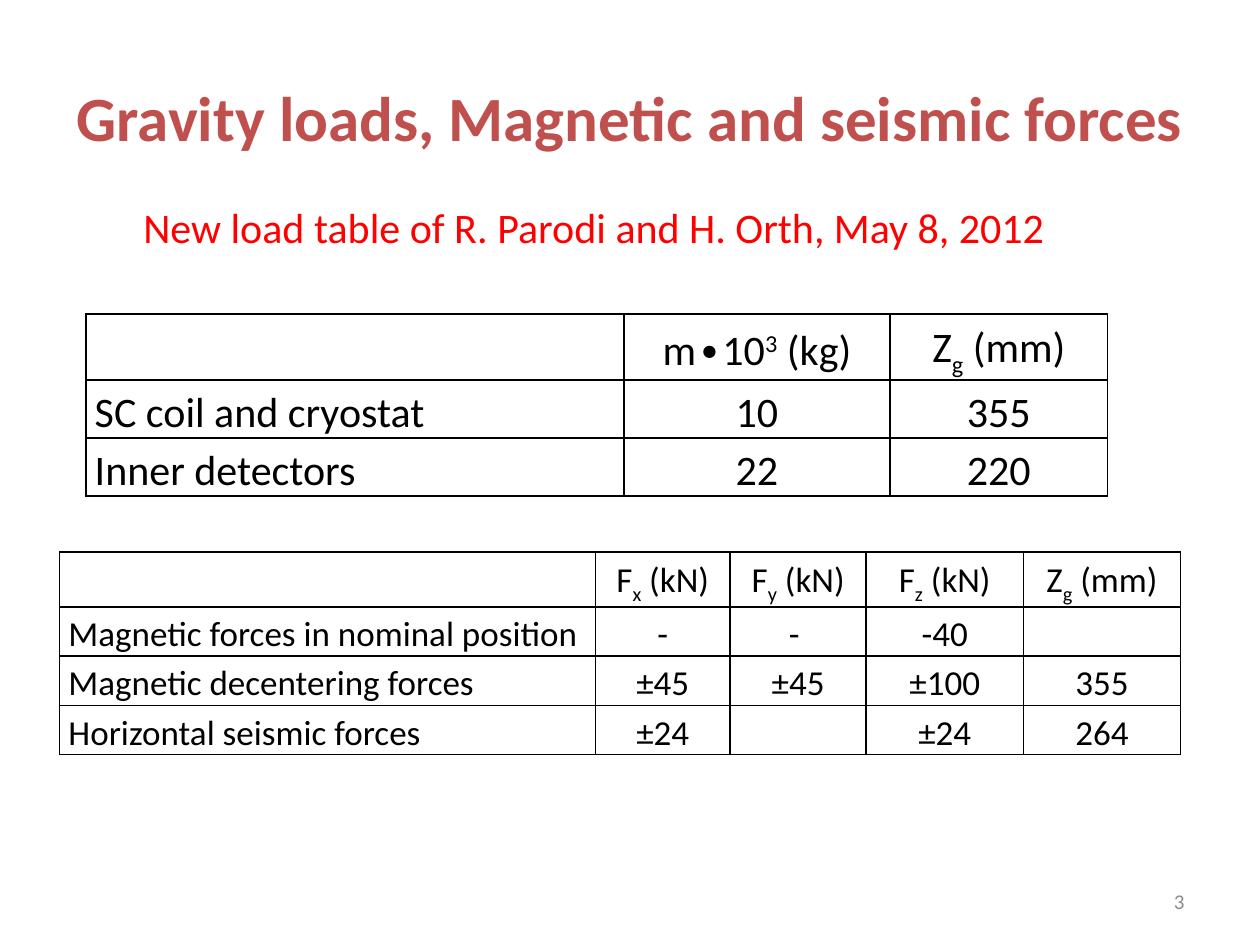
from lxml.etree import SubElement as Sub
from pptx import Presentation
from pptx.dml.color import RGBColor as RGB
from pptx.enum.text import MSO_ANCHOR as Anchor, MSO_AUTO_SIZE as Auto, PP_ALIGN as Align
from pptx.oxml.ns import qn
from pptx.util import Cm, Pt

THEME = {
    "font": "Calibri",
    "title": {"size": 36, "color": "C0504D", "bold": True},
    "note": {"size": 24, "color": "FF0000"},
    "page": {"size": 12, "color": "8C8C8C"},
    "loads": {"size": 24, "color": "000000"},
    "forces": {"size": 20, "color": "000000"},
    "line": "000000",
    "fill": "FFFFFF",
}
SUB, SUP = -25, 30

TITLE = "Gravity loads, Magnetic and seismic forces"
NOTE = "New load table of R. Parodi and H. Orth, May 8, 2012"
PAGE = "3"

# A tuple cell holds: base text, raised or lowered text, rest, shift in percent
ZG = ("Z", "g", " (mm)", SUB)
TABLES = [
    {
        "style": "forces", "at": (1.2, 11.13),
        "cols": [10.8, 2.72, 2.74, 3.17, 3.17], "rows": [1.09, 0.99, 0.99, 0.99],
        "cells": [
            ["", *[("F", axis, " (kN)", SUB) for axis in "xyz"], ZG],
            ["Magnetic forces in nominal position", "-", "- ", "-40", ""],
            ["Magnetic decentering forces", "±45", "±45", "±100", "355"],
            ["Horizontal seismic forces", "±24", "", "±24", "264"],
        ],
    },
    {
        "style": "loads", "at": (1.73, 6.33),
        "cols": [10.85, 5.36, 4.39], "rows": [1.31, 1.17, 1.17],
        "cells": [
            ["", ("m∙10", "3", " (kg)", SUP), ZG],
            ["SC coil and cryostat", "10", "355"],
            ["Inner detectors", "22", "220"],
        ],
    },
]


def put(obj, **vals):
    for name, val in vals.items():
        setattr(obj, name, val)


def write(para, text, style, shift=0):
    run = para.add_run()
    run.text = text
    put(run.font, name=THEME["font"], size=Pt(style["size"]), bold=style.get("bold", False))
    run.font.color.rgb = RGB.from_string(style["color"])
    if shift:
        run.font._element.set("baseline", str(shift * 1000))


def fill_box(shape, text, style, align):
    frame = shape.text_frame
    put(frame, word_wrap=True, vertical_anchor=Anchor.MIDDLE)
    para = frame.paragraphs[0]
    para.alignment = align
    write(para, text, THEME[style])
    return frame


def rule(cell):
    """Draw a thin line on all four sides of a cell."""
    props = cell._tc.get_or_add_tcPr()
    for side in ("lnL", "lnR", "lnT", "lnB"):
        line = Sub(props, qn("a:" + side), w=str(Pt(1)))
        Sub(Sub(line, qn("a:solidFill")), qn("a:srgbClr"), val=THEME["line"])


def fill_cell(cell, item, style, align):
    rule(cell)
    cell.fill.solid()
    cell.fill.fore_color.rgb = RGB.from_string(THEME["fill"])
    put(cell, vertical_anchor=Anchor.MIDDLE, margin_left=Cm(0.18),
        margin_right=Cm(0.18), margin_top=0, margin_bottom=0)
    if not item:
        return
    para = cell.text_frame.paragraphs[0]
    put(para, alignment=align, line_spacing=1.15, space_before=Pt(6), space_after=Pt(6))
    if isinstance(item, tuple):
        base, mark, rest, shift = item
        parts = [(base, 0), (mark, shift), (rest, 0)]
    else:
        parts = [(item, 0)]
    for text, shift in parts:
        write(para, text, style, shift)


def add_grid(slide, data):
    cols, rows = data["cols"], data["rows"]
    size = map(Cm, (*data["at"], sum(cols), sum(rows)))
    grid = slide.shapes.add_table(len(rows), len(cols), *size).table
    put(grid, first_row=False, horz_banding=False)
    for col, width in zip(grid.columns, cols):
        col.width = Cm(width)
    for row, height, items in zip(grid.rows, rows, data["cells"]):
        row.height = Cm(height)
        for i, (cell, item) in enumerate(zip(row.cells, items)):
            align = Align.CENTER if i else Align.LEFT
            fill_cell(cell, item, THEME[data["style"]], align)


def main():
    deck = Presentation()
    put(deck, slide_width=Cm(25.4), slide_height=Cm(19.05))
    slide = deck.slides.add_slide(deck.slide_layouts[5])

    title = slide.shapes.title
    put(title, left=Cm(1.27), top=Cm(0.76), width=Cm(22.86), height=Cm(3.18))
    fill_box(title, TITLE, "title", Align.CENTER)

    page = slide.shapes.add_textbox(Cm(18.2), Cm(17.65), Cm(5.93), Cm(1.02))
    fill_box(page, PAGE, "page", Align.RIGHT)
    note = slide.shapes.add_textbox(Cm(2.64), Cm(3.94), Cm(19.61), Cm(1.27))
    fill_box(note, NOTE, "note", Align.LEFT).auto_size = Auto.SHAPE_TO_FIT_TEXT

    for data in TABLES:
        add_grid(slide, data)
    deck.save("out.pptx")


if __name__ == "__main__":
    main()
